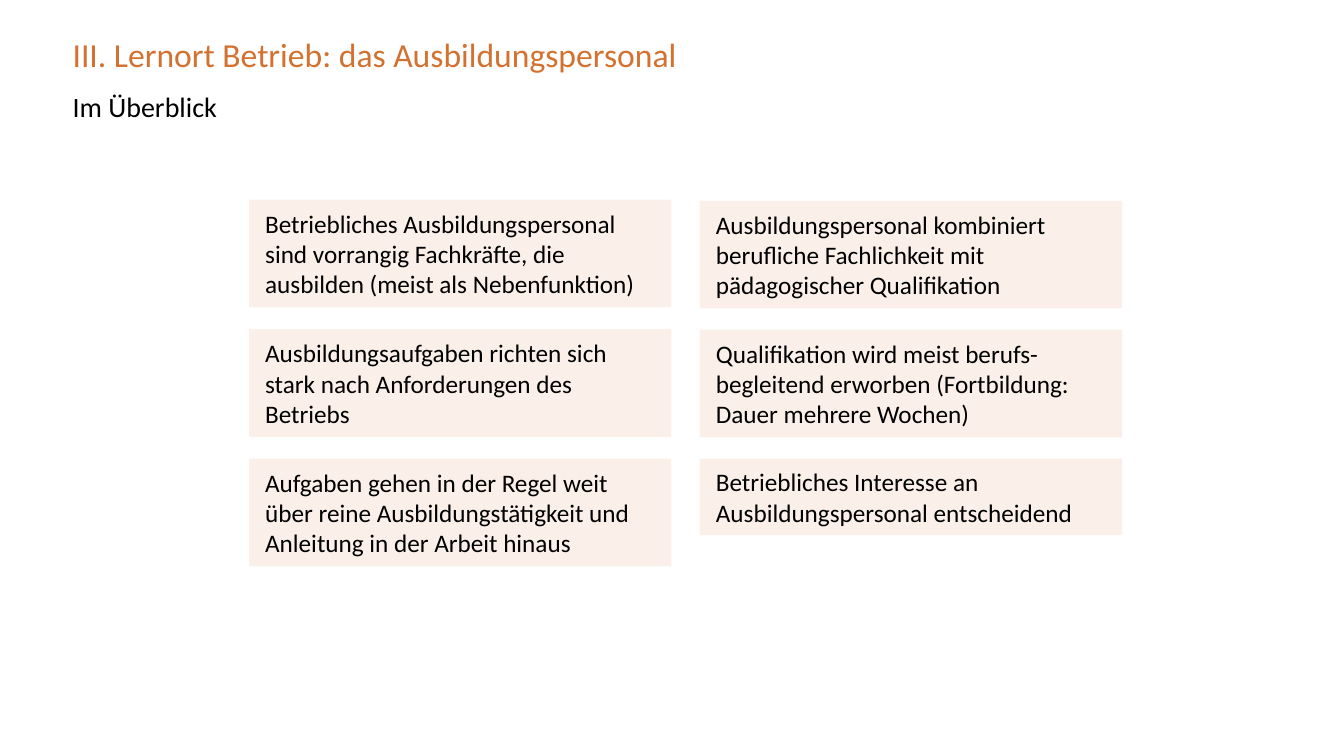
from lxml import etree
from pptx import Presentation
from pptx.dml.color import RGBColor
from pptx.enum.shapes import MSO_SHAPE
from pptx.enum.text import MSO_ANCHOR, MSO_AUTO_SIZE, PP_ALIGN
from pptx.oxml.ns import qn
from pptx.util import Inches, Pt

ORANGE = "D37230"
BLACK = "000000"


def color(hex_value):
    return RGBColor.from_string(hex_value)


def write_text(shape, text, size, hex_value, anchor, margins=(0, 0)):
    frame = shape.text_frame
    frame.word_wrap = True
    frame.vertical_anchor = anchor
    frame.margin_left = frame.margin_right = Inches(margins[0])
    frame.margin_top = frame.margin_bottom = Inches(margins[1])
    paragraph = frame.paragraphs[0]
    paragraph.alignment = PP_ALIGN.LEFT
    run = paragraph.add_run()
    run.text = text
    run.font.name = "Calibri"
    run.font.size = Pt(size)
    run.font.color.rgb = color(hex_value)
    return frame


presentation = Presentation()
presentation.slide_width = Inches(13.33)
presentation.slide_height = Inches(7.5)
slide = presentation.slides.add_slide(presentation.slide_layouts[5])

# Title and subtitle
title = slide.shapes.title
title.left, title.top = Inches(0.72), Inches(0.32)
title.width, title.height = Inches(9.84), Inches(0.49)
title_frame = write_text(title, "III. Lernort Betrieb: das Ausbildungspersonal",
                         24, ORANGE, MSO_ANCHOR.MIDDLE)
title_frame.auto_size = MSO_AUTO_SIZE.NONE
title_frame.paragraphs[0].line_spacing = 0.9

subtitle = slide.shapes.add_textbox(Inches(0.72), Inches(0.89), Inches(12.09), Inches(0.49))
write_text(subtitle, "Im Überblick", 20, BLACK, MSO_ANCHOR.TOP)

# Two columns of statements: left edge, first top, (text, box height)
LAST_TOP = 4.55
columns = [
    (2.47, 1.98, [
        ("Betriebliches Ausbildungspersonal sind vorrangig Fachkräfte, die "
         "ausbilden (meist als Nebenfunktion)", 1.07),
        ("Ausbildungsaufgaben richten sich stark nach Anforderungen des Betriebs", 1.07),
        ("Aufgaben gehen in der Regel weit über reine Ausbildungstätigkeit und "
         "Anleitung in der Arbeit hinaus", 1.07),
    ]),
    (6.94, 1.99, [
        ("Ausbildungspersonal kombiniert berufliche Fachlichkeit mit "
         "pädagogischer Qualifikation", 1.07),
        ("Qualifikation wird meist berufs-begleitend erworben (Fortbildung: "
         "Dauer mehrere Wochen)", 1.07),
        ("Betriebliches Interesse an Ausbildungspersonal entscheidend", 0.76),
    ]),
]
for left, first_top, statements in columns:
    pitch = (LAST_TOP - first_top) / (len(statements) - 1)
    for row, (text, height) in enumerate(statements):
        box = slide.shapes.add_shape(MSO_SHAPE.RECTANGLE, Inches(left),
                                     Inches(first_top + row * pitch),
                                     Inches(4.19), Inches(height))
        box.shadow.inherit = False
        box.line.fill.background()
        box.fill.solid()
        box.fill.fore_color.rgb = color(ORANGE)
        # Make the fill 10 % opaque
        fill_color = box.fill._xPr.find(qn("a:solidFill")).find(qn("a:srgbClr"))
        etree.SubElement(fill_color, qn("a:alpha"), val="10000")
        frame = write_text(box, text, 18, BLACK, MSO_ANCHOR.MIDDLE, (0.16, 0.08))
        frame.auto_size = MSO_AUTO_SIZE.SHAPE_TO_FIT_TEXT

presentation.save("out.pptx")
